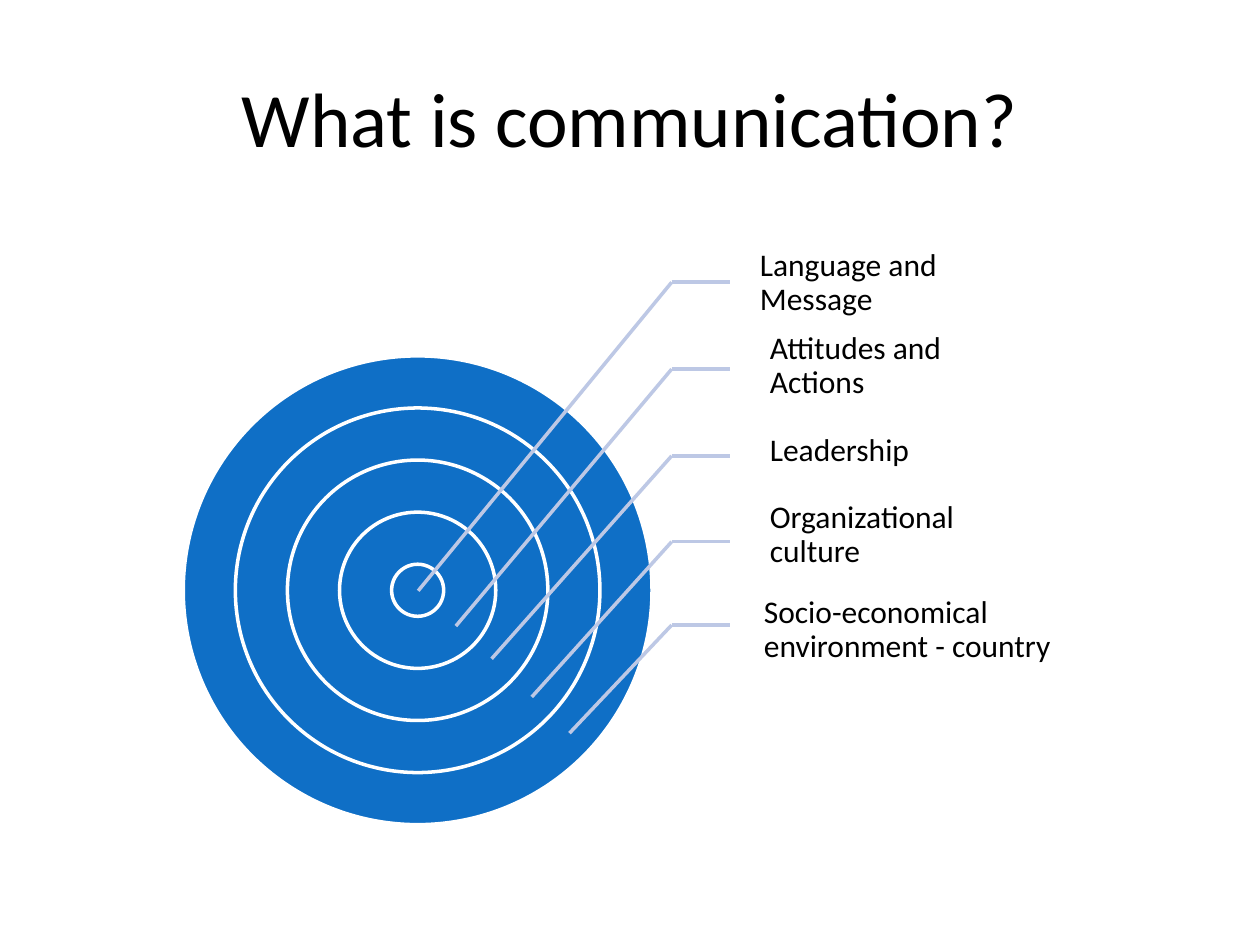
from pptx import Presentation
from pptx.dml.color import RGBColor
from pptx.enum import shapes, text
from pptx.oxml.ns import qn
from pptx.util import Cm, Pt
from lxml import etree

TITLE = "What is communication?"
LAYERS = [
    {"label": "Language and Message", "box": (14.96, 4.88, 4.72), "y": 5.69, "tip": (8.43, 11.91)},
    {"label": "Attitudes and Actions", "box": (15.16, 6.55, 4.72), "y": 7.44, "tip": (9.19, 12.62)},
    {"label": "Leadership", "box": (15.16, 8.26, 4.72), "y": 9.19, "tip": (9.91, 13.28)},
    {"label": "Organizational culture", "box": (15.16, 9.96, 4.72), "y": 10.92, "tip": (10.72, 14.05)},
    {"label": "Socio-economical environment - country", "box": (15.04, 11.86, 8.41), "y": 12.6, "tip": (11.48, 14.78)},
]
CENTER_X, CENTER_Y = 8.42, 11.9
CORE_DIAMETER = 1.05
ELBOW_X, LEADER_END_X = 13.54, 14.71
LABEL_HEIGHT = 1.68
BLUE, PALE, WHITE, BLACK = "0F6FC6", "BDC8E5", "FFFFFF", "000000"


def color(value):
    return RGBColor.from_string(value)


def add_ring(slide, diameter):
    ring = slide.shapes.add_shape(
        shapes.MSO_SHAPE.OVAL, Cm(CENTER_X - diameter / 2), Cm(CENTER_Y - diameter / 2),
        Cm(diameter), Cm(diameter))
    ring.shadow.inherit = False
    ring.fill.solid()
    ring.fill.fore_color.rgb = color(BLUE)
    ring.line.color.rgb = color(WHITE)
    ring.line.width = Pt(2)


def add_line(slide, start, end):
    line = slide.shapes.add_connector(
        shapes.MSO_CONNECTOR.STRAIGHT, *(Cm(value) for value in (*start, *end)))
    line.line.color.rgb = color(PALE)
    line.line.width = Pt(2)
    etree.SubElement(line._element.spPr, qn("a:effectLst"))


def add_text(slide, wording, box, size, align, margins, spacing=1.0):
    shape = slide.shapes.add_textbox(*(Cm(value) for value in box))
    frame = shape.text_frame
    frame.word_wrap = True
    frame.vertical_anchor = text.MSO_ANCHOR.MIDDLE
    frame.margin_left, frame.margin_top, frame.margin_right, frame.margin_bottom = (
        Cm(value) for value in margins)
    paragraph = frame.paragraphs[0]
    paragraph.alignment = align
    paragraph.line_spacing = spacing
    run = paragraph.add_run()
    run.text = wording
    run.font.name = "Calibri"
    run.font.size = Pt(size)
    run.font.color.rgb = color(BLACK)


def main():
    presentation = Presentation()
    presentation.slide_width, presentation.slide_height = Cm(25.4), Cm(19.05)
    slide = presentation.slides.add_slide(presentation.slide_layouts[6])

    add_text(slide, TITLE, (1.27, 0.76, 22.86, 3.18), 44,
             text.PP_ALIGN.CENTER, (0.25, 0.13, 0.25, 0.13))

    for index in reversed(range(len(LAYERS))):
        add_ring(slide, CORE_DIAMETER * (2 * index + 1))

    for layer in LAYERS:
        elbow = (ELBOW_X, layer["y"])
        add_text(slide, layer["label"], (*layer["box"], LABEL_HEIGHT), 18,
                 text.PP_ALIGN.LEFT, (0.36, 0.08, 0.08, 0.08), 0.9)
        add_line(slide, elbow, (LEADER_END_X, layer["y"]))
        add_line(slide, elbow, layer["tip"])

    presentation.save("out.pptx")


if __name__ == "__main__":
    main()
